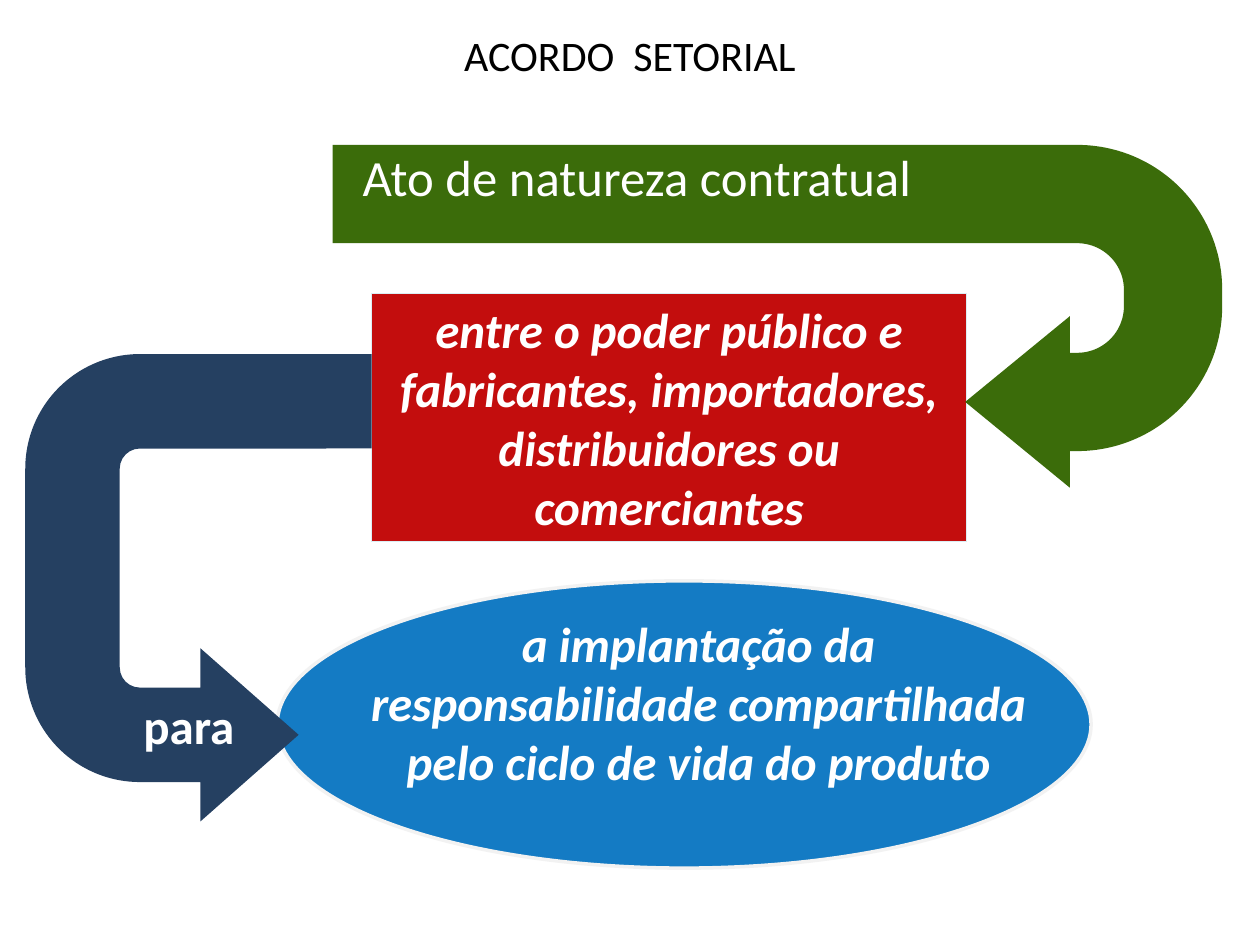
from pptx import Presentation
from pptx.dml.color import RGBColor
from pptx.enum.shapes import MSO_SHAPE
from pptx.enum.text import MSO_ANCHOR, PP_ALIGN
from pptx.oxml.ns import qn
from pptx.util import Inches, Pt
from lxml.etree import SubElement

COLORS = {
    "text": "000000",
    "light": "FFFFFF",
    "red": "C00000",
    "red_edge": "DBEEF4",
    "blue": "0070C0",
    "blue_edge": "F2F2F2",
    "green": "336600",
    "navy": "254061",
}
COLS, ROWS = 100, 75


class SlideBuilder:
    font = "Calibri"

    def __init__(self, prs):
        self.s = prs.slides.add_slide(prs.slide_layouts[6])
        self.col = prs.slide_width / COLS
        self.row = prs.slide_height / ROWS

    def box(self, x, y, w, h):
        return [round(v) for v in (x * self.col, y * self.row, w * self.col, h * self.row)]

    def paint(self, sp, color, opacity=100, edge=None, weight=0):
        sp.shadow.inherit = False
        sp.fill.solid()
        sp.fill.fore_color.rgb = RGBColor.from_string(COLORS[color])
        if opacity < 100:
            clr = sp._element.spPr.find(qn("a:solidFill"))[0]
            SubElement(clr, qn("a:alpha")).set("val", str(opacity * 1000))
        if edge:
            sp.line.color.rgb = RGBColor.from_string(COLORS[edge])
            sp.line.width = Pt(weight)
        else:
            sp.line.fill.background()
        return sp

    def shape(self, kind, x, y, w, h, color, opacity, edge, weight):
        sp = self.s.shapes.add_shape(kind, *self.box(x, y, w, h))
        return self.paint(sp, color, opacity, edge, weight)

    def uturn(self, x, y, w, h, color, shaft, head, length, bend, tip,
              opacity=100, mirrored=False):
        left, top, across, down = self.box(x, y, w, h)
        shift = (across - down) // 2
        sp = self.s.shapes.add_shape(
            MSO_SHAPE.U_TURN_ARROW, left + shift, top - shift, down, across)
        side = min(w, h)
        sizes = [v / side for v in (shaft, head, length, bend)] + [tip / w]
        for i, value in enumerate(sizes):
            sp.adjustments[i] = value
        sp.rotation = 270 if mirrored else 90
        if mirrored:
            sp._element.spPr.find(qn("a:xfrm")).set("flipH", "1")
        return self.paint(sp, color, opacity)

    def add_text(self, sp, text, size, color="light", bold=False, italic=False,
                 align=PP_ALIGN.CENTER, anchor=MSO_ANCHOR.TOP, before=0, wrap=True):
        tf = sp.text_frame
        tf.word_wrap = wrap
        tf.vertical_anchor = anchor
        p = tf.paragraphs[0]
        p.alignment = align
        p.space_before = Pt(before)
        r = p.add_run()
        r.text = text
        r.font.name = self.font
        r.font.size = Pt(size)
        r.font.bold = bold
        r.font.italic = italic
        r.font.color.rgb = RGBColor.from_string(COLORS[color])

    def label(self, x, y, w, h, text, size, **style):
        self.add_text(self.s.shapes.add_textbox(*self.box(x, y, w, h)), text, size, **style)


def main():
    prs = Presentation()
    prs.slide_width, prs.slide_height = Inches(10), Inches(7.5)
    s = SlideBuilder(prs)
    emphasis = dict(bold=True, italic=True, before=6)

    parties = s.shape(MSO_SHAPE.RECTANGLE, 29.5, 23.3, 47.2, 19.7, "red", 95, "red_edge", 0.75)
    s.add_text(parties, "entre o poder público e fabricantes, importadores, "
               "distribuidores ou comerciantes", 28, **emphasis)
    s.shape(MSO_SHAPE.OVAL, 22, 46.1, 64.6, 22.8, "blue", 92, "blue_edge", 2)
    s.uturn(26.4, 11.5, 70.6, 27.2, "green", shaft=7.8, head=6.8, length=8.3,
            bend=11.5, tip=20.4, opacity=96)
    s.label(0, 0, 100, 8.7, "ACORDO  SETORIAL", 24, color="text", anchor=MSO_ANCHOR.MIDDLE)
    s.label(27.8, 11.1, 46.1, 5.8, "Ato de natureza contratual", 29,
            align=PP_ALIGN.LEFT, before=6, wrap=False)
    s.label(27.1, 48.2, 56.7, 15, "a implantação da responsabilidade compartilhada "
            "pelo ciclo de vida do produto", 28, **emphasis)
    s.uturn(2, 28.1, 27.5, 37.1, "navy", shaft=7.5, head=6.9, length=7.8,
            bend=9.1, tip=21.7, mirrored=True)
    s.label(10.4, 54.7, 12.4, 5.6, "para", 28, bold=True, align=PP_ALIGN.LEFT)

    prs.save("out.pptx")


if __name__ == "__main__":
    main()
